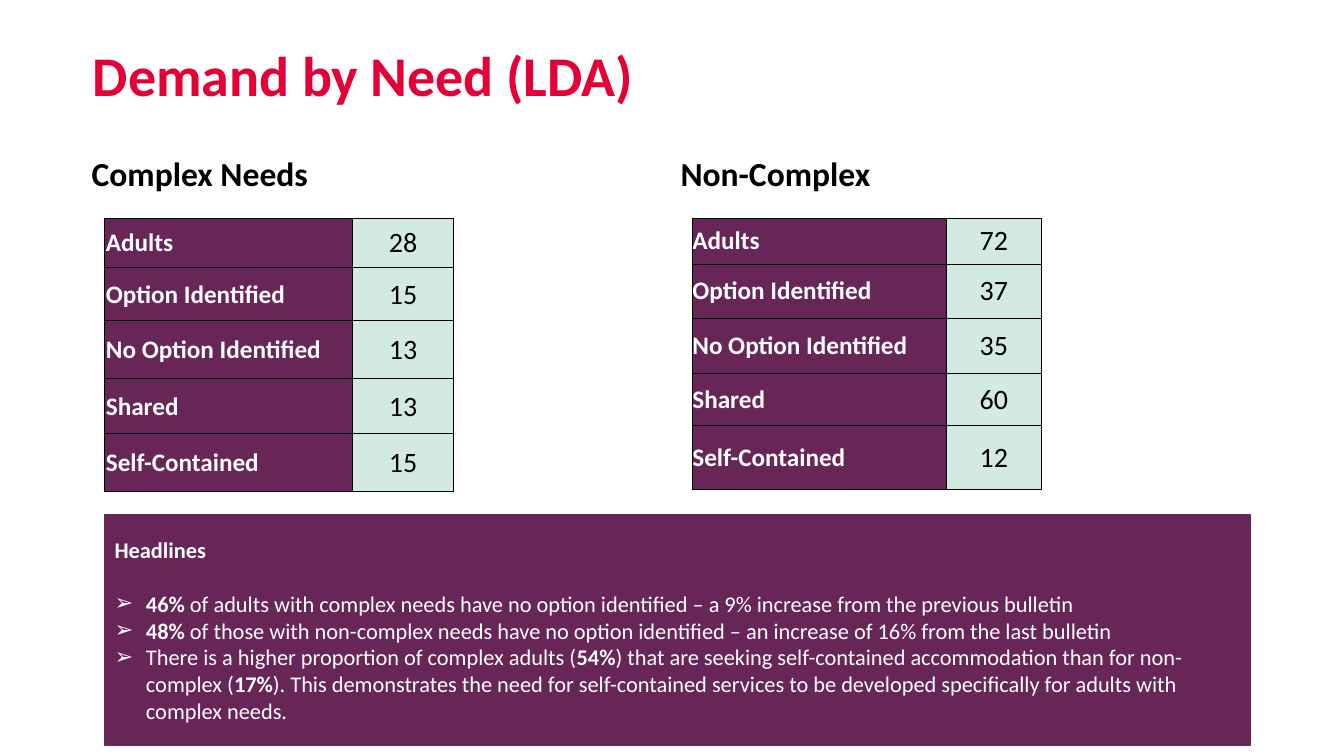
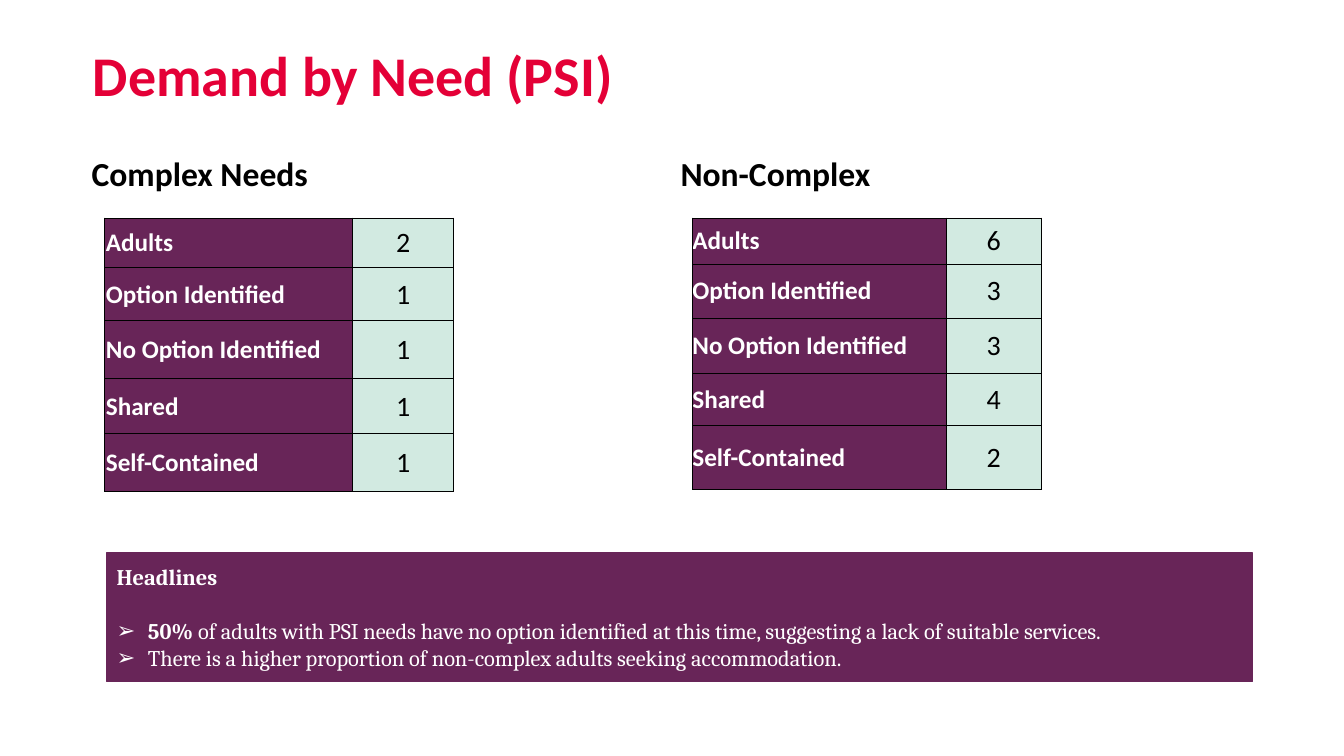
from dataclasses import dataclass

from lxml.etree import SubElement
from pptx import Presentation
from pptx.dml.color import RGBColor
from pptx.enum.shapes import MSO_SHAPE
from pptx.enum.text import MSO_ANCHOR, MSO_AUTO_SIZE, PP_ALIGN
from pptx.oxml.ns import qn
from pptx.slide import Slide
from pptx.table import _Cell as Cell
from pptx.text.text import TextFrame, _Paragraph as Paragraph
from pptx.util import Cm, Pt

COLOURS = {
    "title": "E40037",
    "text": "000000",
    "plum": "682558",
    "mint": "D2EAE1",
    "white": "FFFFFF",
}
FONT = "Calibri"
ROW_LABELS = ("Adults", "Option Identified", "No Option Identified", "Shared", "Self-Contained")
TABLE_TOP = 5.49
HEADING_TOP, HEADING_HEIGHT = 3.51, 1.35
HEADLINES_WIDTH = 28.88
BULLET_INDENT = 0.79


@dataclass(frozen=True)
class Column:
    heading: str
    placeholder: int
    heading_left: float
    heading_width: float
    table_left: float
    widths: tuple[float, ...]
    heights: tuple[float, ...]
    margin: float


@dataclass(frozen=True)
class TextRun:
    text: str
    bold: bool = False


@dataclass(frozen=True)
class Headlines:
    left: float
    top: float
    height: float
    font: str
    bullets: tuple[tuple[TextRun, ...], ...]


@dataclass(frozen=True)
class Page:
    title: str
    values: tuple[tuple[int, ...], ...]
    headlines: Headlines


COLUMNS = (
    Column("Complex Needs", 1, 2.31, 14.33, 2.64, (6.25, 2.54),
           (1.24, 1.35, 1.45, 1.4, 1.45), 0.03),
    Column("Non-Complex", 3, 17.15, 14.4, 17.45, (6.4, 2.39),
           (1.17, 1.35, 1.4, 1.32, 1.6), 0),
)

PAGES = (
    Page(
        "Demand by Need (LDA)",
        ((28, 15, 13, 13, 15), (72, 37, 35, 60, 12)),
        Headlines(2.64, 12.98, 5.79, FONT, (
            (TextRun("46%", True),
             TextRun(" of adults with complex needs have no option identified – "
                     "a 9% increase from the previous bulletin")),
            (TextRun("48% ", True),
             TextRun("of those with non-complex needs have no option identified – "
                     "an increase of 16% from the last bulletin")),
            (TextRun("There is a higher proportion of complex adults ("),
             TextRun("54%", True),
             TextRun(") that are seeking self-contained accommodation than for non-complex ("),
             TextRun("17%", True),
             TextRun("). This demonstrates the need for self-contained services to be "
                     "developed specifically for adults with complex needs.")),
        )),
    ),
    Page(
        "Demand by Need (PSI)",
        ((2, 1, 1, 1, 1), (6, 3, 3, 4, 2)),
        Headlines(2.69, 13.94, 3.23, "Cambria", (
            (TextRun("50%", True),
             TextRun(" of adults with PSI needs have no option identified at this time, "
                     "suggesting a lack of suitable services.")),
            (TextRun("There is a higher proportion of non-complex adults "
                     "seeking accommodation."),),
        )),
    ),
)


def colour(name: str) -> RGBColor:
    return RGBColor.from_string(COLOURS[name])


def add_run(paragraph: Paragraph, text: str, size: float, colour_name: str,
            bold: bool = True, font: str = FONT) -> None:
    run = paragraph.add_run()
    run.text = text
    run.font.name = font
    run.font.size = Pt(size)
    run.font.bold = bold
    run.font.color.rgb = colour(colour_name)


def prepare_frame(frame: TextFrame, anchor: MSO_ANCHOR) -> None:
    frame.margin_left = frame.margin_top = frame.margin_right = frame.margin_bottom = 0
    frame.vertical_anchor = anchor
    frame.auto_size = MSO_AUTO_SIZE.NONE
    frame.word_wrap = True


def fill_placeholder(slide: Slide, index: int, text: str, size: float, colour_name: str,
                     box: tuple[float, float, float, float], anchor: MSO_ANCHOR) -> Paragraph:
    shape = slide.placeholders[index]
    shape.left, shape.top, shape.width, shape.height = (Cm(length) for length in box)
    prepare_frame(shape.text_frame, anchor)
    paragraph = shape.text_frame.paragraphs[0]
    paragraph.alignment = PP_ALIGN.LEFT
    add_run(paragraph, text, size, colour_name)
    return paragraph


def set_borders(cell: Cell) -> None:
    properties = cell._tc.get_or_add_tcPr()
    for position, side in enumerate(("a:lnL", "a:lnR", "a:lnT", "a:lnB")):
        line = properties.makeelement(qn(side), {"w": str(Pt(0.5))})
        fill = SubElement(line, qn("a:solidFill"))
        SubElement(fill, qn("a:srgbClr"), {"val": COLOURS["text"]})
        properties.insert(position, line)


def format_cell(cell: Cell, fill_name: str, margin: float) -> Paragraph:
    cell.fill.solid()
    cell.fill.fore_color.rgb = colour(fill_name)
    cell.margin_left = cell.margin_top = cell.margin_right = Cm(margin)
    cell.margin_bottom = 0
    cell.vertical_anchor = MSO_ANCHOR.MIDDLE
    set_borders(cell)
    return cell.text_frame.paragraphs[0]


def add_needs_table(slide: Slide, column: Column, values: tuple[int, ...]) -> None:
    table = slide.shapes.add_table(
        len(ROW_LABELS), len(column.widths), Cm(column.table_left), Cm(TABLE_TOP),
        Cm(sum(column.widths)), Cm(sum(column.heights))).table
    table.first_row = table.horz_banding = False
    for table_column, width in zip(table.columns, column.widths):
        table_column.width = Cm(width)
    for index, (label, value) in enumerate(zip(ROW_LABELS, values)):
        table.rows[index].height = Cm(column.heights[index])
        label_paragraph = format_cell(table.cell(index, 0), "plum", column.margin)
        add_run(label_paragraph, label, 18, "white")
        value_paragraph = format_cell(table.cell(index, 1), "mint", column.margin)
        value_paragraph.alignment = PP_ALIGN.CENTER
        add_run(value_paragraph, str(value), 20, "text", bold=False)


def set_bullet(paragraph: Paragraph) -> None:
    properties = paragraph._p.get_or_add_pPr()
    properties.set("marL", str(Cm(BULLET_INDENT)))
    properties.set("indent", str(-Cm(BULLET_INDENT)))
    SubElement(properties, qn("a:buFont"), {"typeface": "Arial"})
    SubElement(properties, qn("a:buChar"), {"char": "➢"})


def add_headlines(slide: Slide, headlines: Headlines) -> None:
    shape = slide.shapes.add_shape(
        MSO_SHAPE.RECTANGLE, Cm(headlines.left), Cm(headlines.top),
        Cm(HEADLINES_WIDTH), Cm(headlines.height))
    shape.shadow.inherit = False
    shape.fill.solid()
    shape.fill.fore_color.rgb = colour("plum")
    shape.line.color.rgb = colour("plum")
    shape.line.width = Pt(1)
    frame = shape.text_frame
    frame.word_wrap = True
    frame.vertical_anchor = MSO_ANCHOR.MIDDLE
    heading = frame.paragraphs[0]
    heading.alignment = PP_ALIGN.LEFT
    heading.space_after = Pt(19.5)
    add_run(heading, "Headlines", 16, "white", font=headlines.font)
    for bullet in headlines.bullets:
        paragraph = frame.add_paragraph()
        paragraph.alignment = PP_ALIGN.LEFT
        set_bullet(paragraph)
        for part in bullet:
            add_run(paragraph, part.text, 16, "white", part.bold, headlines.font)


def add_page(presentation: Presentation, page: Page) -> None:
    slide = presentation.slides.add_slide(presentation.slide_layouts.get_by_name("Comparison"))
    fill_placeholder(slide, 0, page.title, 40, "title", (2.34, 1.02, 29.2, 2.13), MSO_ANCHOR.TOP)
    for column, values in zip(COLUMNS, page.values):
        box = (column.heading_left, HEADING_TOP, column.heading_width, HEADING_HEIGHT)
        heading = fill_placeholder(slide, column.placeholder, column.heading, 24, "text",
                                   box, MSO_ANCHOR.BOTTOM)
        heading.space_before = heading.space_after = Pt(11.3)
        add_needs_table(slide, column, values)
    add_headlines(slide, page.headlines)
    for placeholder in list(slide.placeholders):
        if not placeholder.text_frame.text:
            placeholder.element.getparent().remove(placeholder.element)


def main() -> None:
    presentation = Presentation()
    presentation.slide_width = Cm(33.87)
    presentation.slide_height = Cm(19.05)
    for page in PAGES:
        add_page(presentation, page)
    presentation.save("out.pptx")


if __name__ == "__main__":
    main()
